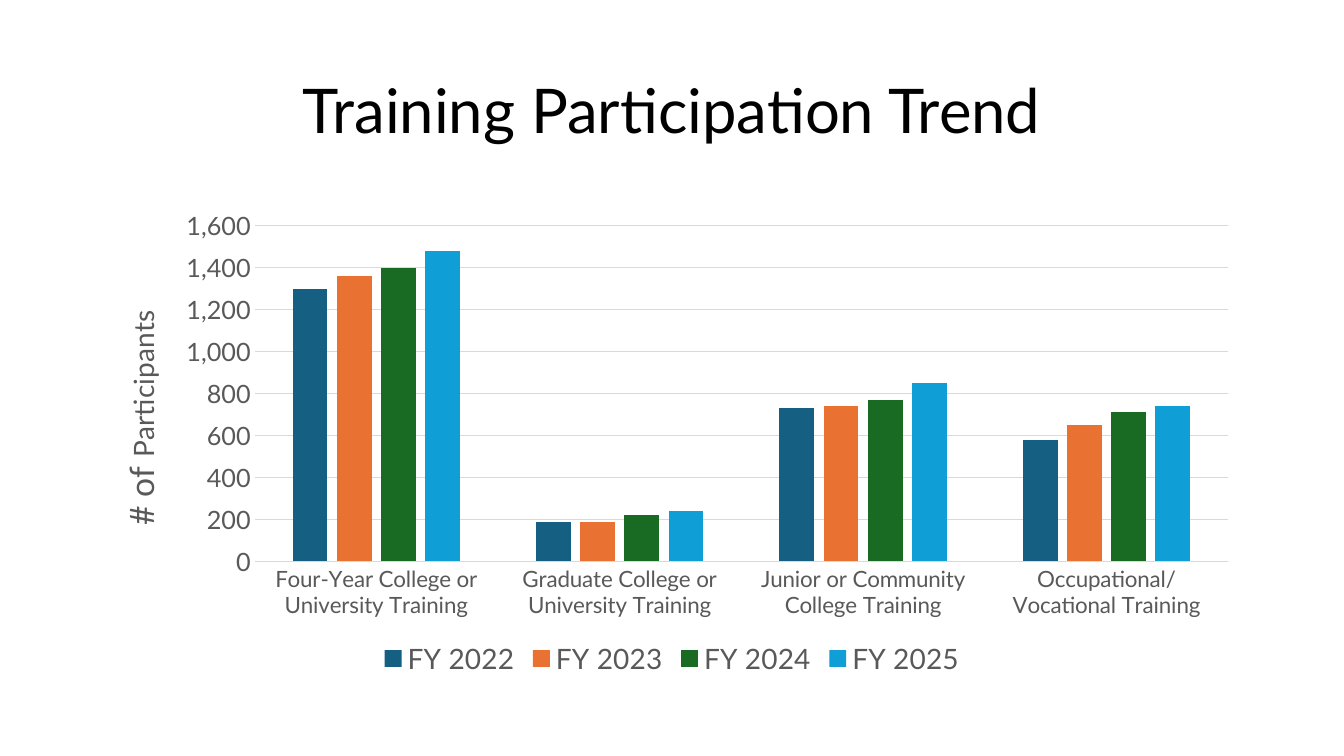
from lxml import etree
from pptx import Presentation
from pptx.chart.data import CategoryChartData
from pptx.dml.color import RGBColor
from pptx.enum.chart import XL_CHART_TYPE, XL_LEGEND_POSITION, XL_TICK_MARK
from pptx.enum.text import MSO_ANCHOR, PP_ALIGN
from pptx.oxml.ns import qn
from pptx.util import Pt

COLUMNS = XL_CHART_TYPE.COLUMN_CLUSTERED
BOTTOM = XL_LEGEND_POSITION.BOTTOM
NO_TICK = XL_TICK_MARK.NONE
MIDDLE = MSO_ANCHOR.MIDDLE
CENTER = PP_ALIGN.CENTER

# Content
TITLE = "Training Participation Trend"
AXIS_TITLE = [("# of ", 24), ("Participants", 20)]
CATEGORIES = [
    "Four-Year College or University Training",
    "Graduate College or University Training",
    "Junior or Community College Training",
    "Occupational/Vocational Training",
]
SERIES = [
    ("FY 2022", [1300, 190, 730, 580], "navy"),
    ("FY 2023", [1360, 190, 740, 650], "orange"),
    ("FY 2024", [1400, 220, 770, 710], "green"),
    ("FY 2025", [1480, 240, 850, 740], "sky"),
]
FONT = "Lato"
COLORS = {
    "black": "000000", "gray": "595959", "grid": "D9D9D9",
    "navy": "156082", "orange": "E97132", "green": "196B24", "sky": "0F9ED5",
}

# Layout: left, top, width, height in points
TITLE_BOX = (66, 29, 828, 104.4)
CHART_BOX = (66, 144, 828, 342.8)
# Shares of the chart area
PLOT_LAYOUT = {"x": 0.14, "y": 0.05, "w": 0.84, "h": 0.7}
AXIS_TITLE_LAYOUT = {"x": 0.02, "y": 0.22}


def color(name):
    return RGBColor.from_string(COLORS[name])


def style_font(font, size, name="gray"):
    font.name = FONT
    font.size = Pt(size)
    font.bold = False
    font.color.rgb = color(name)


def style_line(line):
    line.color.rgb = color("grid")
    line.width = Pt(0.75)


def set_layout(parent, index, shares, inner=False):
    for old in parent.findall(qn("c:layout")):
        parent.remove(old)
    layout = etree.Element(qn("c:layout"))
    manual = etree.SubElement(layout, qn("c:manualLayout"))
    if inner:
        etree.SubElement(manual, qn("c:layoutTarget"), val="inner")
    for key in ("x", "y"):
        etree.SubElement(manual, qn(f"c:{key}Mode"), val="edge")
    for key, share in shares.items():
        etree.SubElement(manual, qn(f"c:{key}"), val=str(share))
    parent.insert(index, layout)


deck = Presentation()
deck.slide_width, deck.slide_height = Pt(960), Pt(540)
slide = deck.slides.add_slide(deck.slide_layouts[5])

# Title
title = slide.shapes.title
title.left, title.top, title.width, title.height = map(Pt, TITLE_BOX)
title.text_frame.text = TITLE
title.text_frame.vertical_anchor = MIDDLE
para = title.text_frame.paragraphs[0]
para.alignment = CENTER
para.line_spacing = 0.9
style_font(para.font, 44, "black")

# Chart
data = CategoryChartData(number_format="#,##0")
data.categories = CATEGORIES
for name, values, _ in SERIES:
    data.add_series(name, values)
chart = slide.shapes.add_chart(COLUMNS, *map(Pt, CHART_BOX), data).chart
chart.has_title = False
style_font(chart.font, 10, "black")

plot = chart.plots[0]
plot.gap_width = 219
plot.overlap = -27
plot.vary_by_categories = False
for series, (_, _, fill) in zip(plot.series, SERIES):
    series.format.fill.solid()
    series.format.fill.fore_color.rgb = color(fill)
set_layout(chart._chartSpace.chart.plotArea, 0, PLOT_LAYOUT, inner=True)

# Legend
chart.has_legend = True
chart.legend.position = BOTTOM
chart.legend.include_in_layout = False
style_font(chart.legend.font, 20)

# Axes
category_axis, value_axis = chart.category_axis, chart.value_axis
for axis, size in ((category_axis, 16), (value_axis, 18)):
    axis.major_tick_mark = axis.minor_tick_mark = NO_TICK
    style_font(axis.tick_labels.font, size)
style_line(category_axis.format.line)
value_axis.format.line.fill.background()
style_line(value_axis.major_gridlines.format.line)
value_axis.minimum_scale, value_axis.maximum_scale = 0, 1600
value_axis.major_unit = 200
value_axis.tick_labels.number_format = "#,##0"
value_axis.tick_labels.number_format_is_linked = False

# Value axis title
axis_title = value_axis.axis_title
para = axis_title.text_frame.paragraphs[0]
for text, size in AXIS_TITLE:
    span = para.add_run()
    span.text = text
    style_font(span.font, size)
body = axis_title._element.find(f".//{qn('a:bodyPr')}")
body.set("rot", "-5400000")
body.set("vert", "horz")
set_layout(axis_title._element, 1, AXIS_TITLE_LAYOUT)

deck.save("out.pptx")
